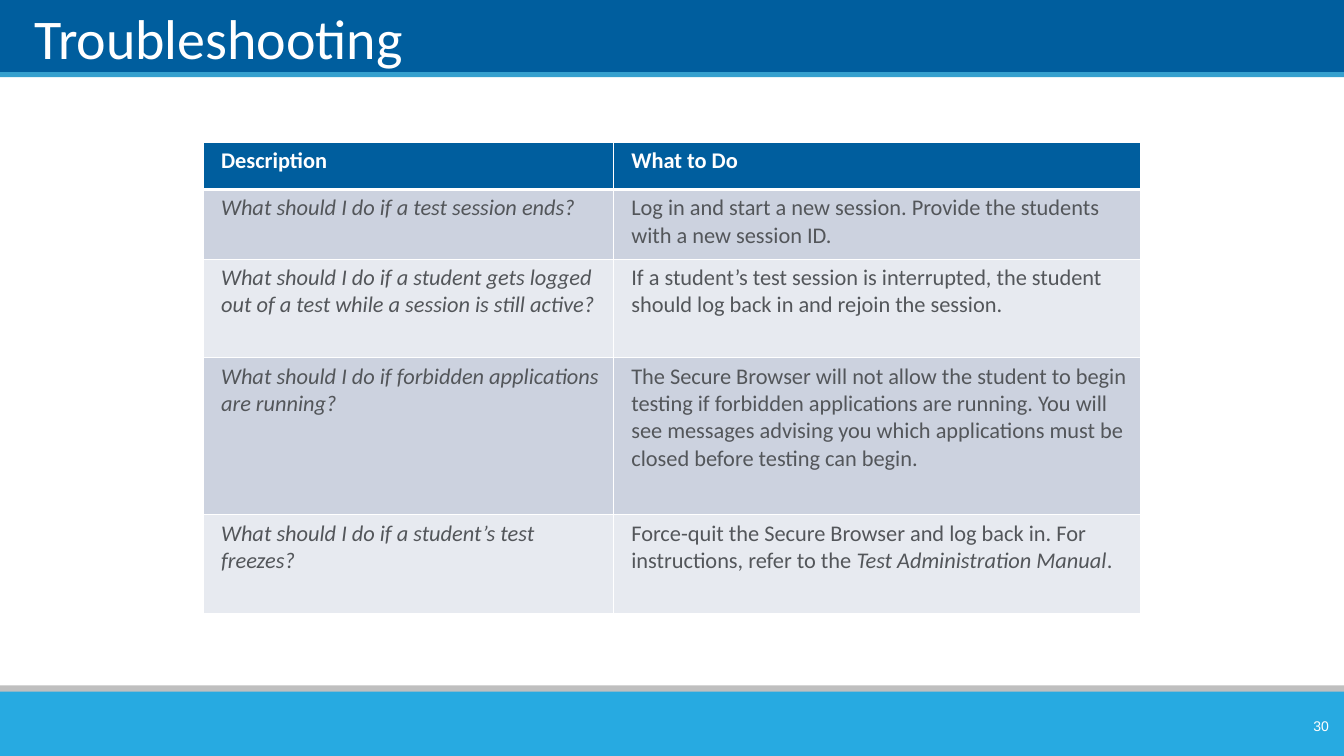
from dataclasses import dataclass

from lxml import etree
from pptx import Presentation
from pptx.dml.color import RGBColor
from pptx.enum.shapes import MSO_SHAPE
from pptx.enum.text import MSO_ANCHOR, MSO_AUTO_SIZE, PP_ALIGN
from pptx.oxml.ns import qn
from pptx.util import Pt

RECTANGLE = MSO_SHAPE.RECTANGLE
MIDDLE, BOTTOM, TOP = MSO_ANCHOR.MIDDLE, MSO_ANCHOR.BOTTOM, MSO_ANCHOR.TOP
LEFT, RIGHT = PP_ALIGN.LEFT, PP_ALIGN.RIGHT
NO_AUTOFIT = MSO_AUTO_SIZE.NONE
TITLE_ONLY_LAYOUT = 5
SLIDE_WIDTH, SLIDE_HEIGHT = 960, 540


@dataclass(frozen=True)
class Theme:
    navy: str = "005E9E"
    header_edge: str = "35A0CE"
    footer_edge: str = "BFBFBF"
    footer: str = "27AAE1"
    dark_band: str = "CCD2DF"
    light_band: str = "E7EAF0"
    white: str = "FFFFFF"
    body_text: str = "53565A"
    font: str = "Calibri"
    number_font: str = "Arial"
    title_size: float = 40
    table_size: float = 16
    number_size: float = 10


@dataclass(frozen=True)
class Bar:
    top: float
    height: float
    color: str


@dataclass(frozen=True)
class Span:
    text: str
    italic: bool = False
    bold: bool = False


@dataclass(frozen=True)
class TableRow:
    height: float
    fill: str
    text_color: str
    cells: tuple[tuple[Span, ...], ...]


THEME = Theme()

BARS = [
    Bar(-0.5, 54, THEME.navy),
    Bar(51.6, 3.6, THEME.header_edge),
    Bar(489.6, 10, THEME.footer_edge),
    Bar(494, 46, THEME.footer),
]

COLUMN_WIDTHS = (293, 377)
HEADER_HEIGHT = 33.8
ANSWERS = [
    (49.7, "What should I do if a test session ends?",
     (Span("Log in and start a new session. Provide the students with a new session ID."),)),
    (70.4, "What should I do if a student gets logged out of a test while a session is still active?",
     (Span("If a student’s test session is interrupted, the student should log back in "
           "and rejoin the session."),)),
    (112.3, "What should I do if forbidden applications are running?",
     (Span("The Secure Browser will not allow the student to begin testing if forbidden "
           "applications are running. You will see messages advising you which applications "
           "must be closed before testing can begin."),)),
    (70.4, "What should I do if a student’s test freezes?",
     (Span("Force-quit the Secure Browser and log back in. For instructions, refer to the "),
      Span("Test Administration Manual", italic=True),
      Span("."))),
]


def table_rows() -> list[TableRow]:
    header = ((Span("Description", bold=True),), (Span("What to Do", bold=True),))
    rows = [TableRow(HEADER_HEIGHT, THEME.navy, THEME.white, header)]
    for index, (height, question, answer) in enumerate(ANSWERS):
        fill = THEME.light_band if index % 2 else THEME.dark_band
        cells = ((Span(question, italic=True),), answer)
        rows.append(TableRow(height, fill, THEME.body_text, cells))
    return rows


def add_run(paragraph, span: Span, font_name: str, size: float, color: str) -> None:
    run = paragraph.add_run()
    run.text = span.text
    run.font.name = font_name
    run.font.size = Pt(size)
    run.font.bold = span.bold
    run.font.italic = span.italic
    run.font.color.rgb = RGBColor.from_string(color)


def add_bar(slide, bar: Bar) -> None:
    shape = slide.shapes.add_shape(RECTANGLE, 0, Pt(bar.top), Pt(SLIDE_WIDTH), Pt(bar.height))
    shape.shadow.inherit = False
    shape.fill.solid()
    shape.fill.fore_color.rgb = RGBColor.from_string(bar.color)
    shape.line.fill.background()


def place_title(slide, text: str) -> None:
    title = slide.shapes.title
    title.left, title.top, title.width, title.height = Pt(24.5), Pt(9.4), Pt(868), Pt(41)
    frame = title.text_frame
    frame.margin_left = frame.margin_top = frame.margin_right = frame.margin_bottom = 0
    frame.vertical_anchor = BOTTOM
    frame.auto_size = NO_AUTOFIT
    frame.word_wrap = True
    paragraph = frame.paragraphs[0]
    paragraph.alignment = LEFT
    add_run(paragraph, Span(text), THEME.font, THEME.title_size, THEME.white)
    # Bring the title in front of the header bar
    slide.shapes._spTree.append(title._element)


def set_borders(cell, header_above: bool, is_header: bool) -> None:
    widths = {"a:lnL": 1, "a:lnR": 1, "a:lnT": 3 if header_above else 1,
              "a:lnB": 3 if is_header else 1}
    properties = cell._tc.get_or_add_tcPr()
    for position, (tag, width) in enumerate(widths.items()):
        line = etree.Element(qn(tag), w=str(Pt(width)))
        fill = etree.SubElement(line, qn("a:solidFill"))
        etree.SubElement(fill, qn("a:srgbClr"), val=THEME.white)
        properties.insert(position, line)


def fill_cell(cell, row: TableRow, spans: tuple[Span, ...]) -> None:
    cell.fill.solid()
    cell.fill.fore_color.rgb = RGBColor.from_string(row.fill)
    cell.margin_left, cell.margin_right = Pt(13), Pt(7.2)
    cell.margin_top = cell.margin_bottom = Pt(3.6)
    cell.vertical_anchor = TOP
    paragraph = cell.text_frame.paragraphs[0]
    paragraph.space_after = Pt(4)
    for span in spans:
        add_run(paragraph, span, THEME.font, THEME.table_size, row.text_color)


def add_answers_table(slide, rows: list[TableRow]) -> None:
    height = sum(row.height for row in rows)
    table = slide.shapes.add_table(len(rows), len(COLUMN_WIDTHS), Pt(145), Pt(101.6),
                                   Pt(sum(COLUMN_WIDTHS)), Pt(height)).table
    for column, width in zip(table.columns, COLUMN_WIDTHS):
        column.width = Pt(width)
    for row_index, row in enumerate(rows):
        table.rows[row_index].height = Pt(row.height)
        for column_index, spans in enumerate(row.cells):
            cell = table.cell(row_index, column_index)
            fill_cell(cell, row, spans)
            set_borders(cell, header_above=row_index == 1, is_header=row_index == 0)


def add_page_number(slide, number: str) -> None:
    frame = slide.shapes.add_textbox(Pt(901), Pt(507.6), Pt(55.4), Pt(21.6)).text_frame
    frame.word_wrap = True
    frame.vertical_anchor = MIDDLE
    paragraph = frame.paragraphs[0]
    paragraph.alignment = RIGHT
    add_run(paragraph, Span(number), THEME.number_font, THEME.number_size, THEME.white)


def main() -> None:
    presentation = Presentation()
    presentation.slide_width, presentation.slide_height = Pt(SLIDE_WIDTH), Pt(SLIDE_HEIGHT)
    slide = presentation.slides.add_slide(presentation.slide_layouts[TITLE_ONLY_LAYOUT])

    # Header and footer bars
    for bar in BARS:
        add_bar(slide, bar)

    # Content
    add_answers_table(slide, table_rows())
    place_title(slide, "Troubleshooting")
    add_page_number(slide, "30")

    presentation.save("out.pptx")


if __name__ == "__main__":
    main()
